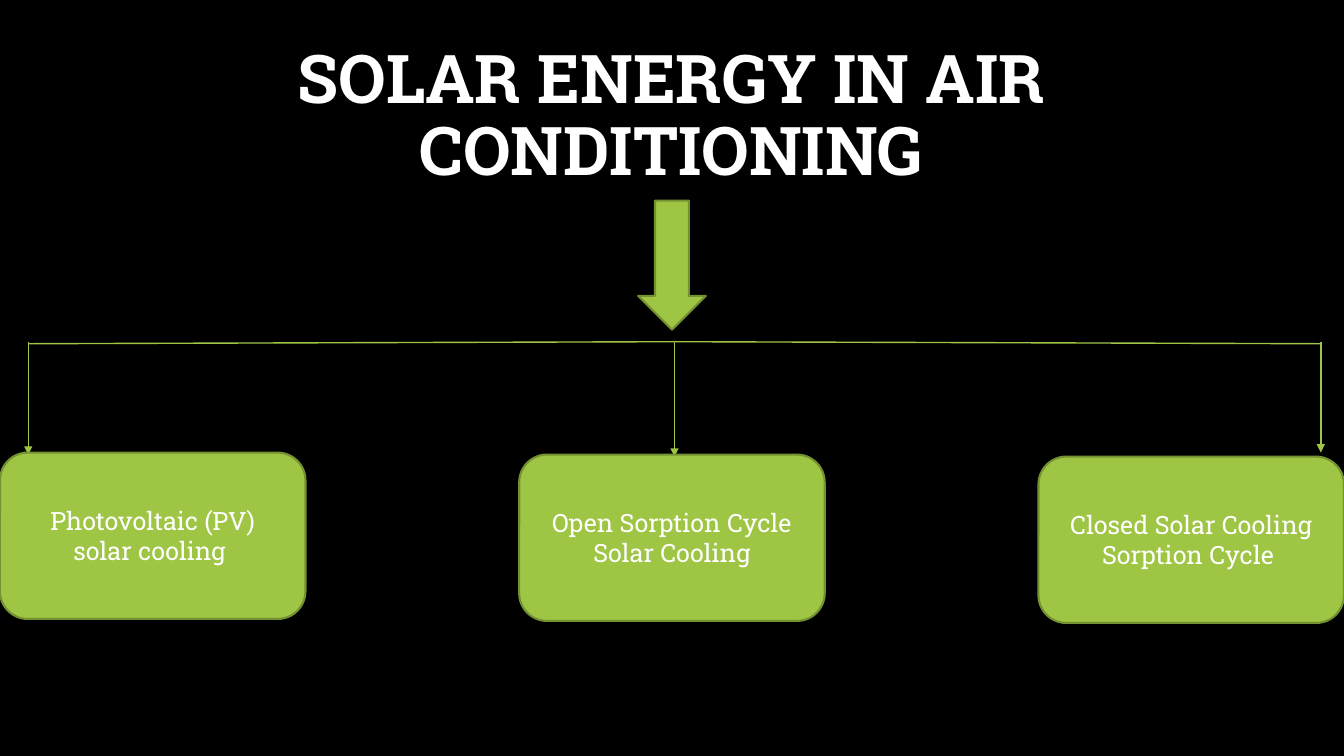
from lxml.etree import SubElement
from pptx import Presentation
from pptx.dml.color import RGBColor
from pptx.enum.shapes import MSO_CONNECTOR, MSO_SHAPE
from pptx.enum.text import MSO_ANCHOR, PP_ALIGN
from pptx.oxml.ns import qn
from pptx.util import Inches, Pt

BLACK = RGBColor(0x00, 0x00, 0x00)
WHITE = RGBColor(0xFF, 0xFF, 0xFF)
GREEN = RGBColor(0x9E, 0xC5, 0x44)
DARK_GREEN = RGBColor(0x75, 0x92, 0x32)

TITLE_FONT = {"name": "Roboto Slab", "size": Pt(48), "bold": True}
LABEL_FONT = {"name": "Roboto Slab", "size": Pt(18), "bold": False}

METHODS = [
    "Photovoltaic (PV) solar cooling ",
    "Open Sorption Cycle Solar Cooling",
    "Closed Solar Cooling Sorption Cycle ",
]


def write_text(shape, text, font, anchor):
    tf = shape.text_frame
    tf.word_wrap = True
    tf.vertical_anchor = anchor
    p = tf.paragraphs[0]
    p.alignment = PP_ALIGN.CENTER
    r = p.add_run()
    r.text = text
    for key, value in font.items():
        setattr(r.font, key, value)
    r.font.color.rgb = WHITE
    return p


def add_title(s, left, top, width, height):
    title = s.shapes.title
    box = {"left": left, "top": top, "width": width, "height": height}
    for key, value in box.items():
        setattr(title, key, Inches(value))
    p = write_text(title, "SOLAR ENERGY IN AIR CONDITIONING", TITLE_FONT, MSO_ANCHOR.BOTTOM)
    p.line_spacing = 0.9


def add_green_shape(s, kind, left, top, width, height):
    sp = s.shapes.add_shape(kind, Inches(left), Inches(top), Inches(width), Inches(height))
    sp.shadow.inherit = False
    sp.fill.solid()
    sp.fill.fore_color.rgb = GREEN
    sp.line.color.rgb = DARK_GREEN
    sp.line.width = Pt(1.5)
    return sp


def add_line(s, x1, y1, x2, y2, arrow=False):
    line = s.shapes.add_connector(
        MSO_CONNECTOR.STRAIGHT, Inches(x1), Inches(y1), Inches(x2), Inches(y2)
    )
    line.line.color.rgb = GREEN
    line.line.width = Pt(1)
    if arrow:
        SubElement(line.line._get_or_add_ln(), qn("a:tailEnd"), type="triangle")
    SubElement(line._element.spPr, qn("a:effectLst"))


def add_branches(s, left, top, width):
    center = left + width / 2
    right = left + width
    for end in (left, right):
        add_line(s, center, top, end, top + 0.02)
    for x, drop in ((left, 1.12), (center, 1.14), (right, 1.1)):
        add_line(s, x, top, x, top + drop, arrow=True)


def add_methods(s, left, top, width, height):
    box_width = 3.03
    step = (width - box_width) / (len(METHODS) - 1)
    for i, text in enumerate(METHODS):
        box = add_green_shape(
            s, MSO_SHAPE.ROUNDED_RECTANGLE, left + i * step, top + i * 0.02, box_width, height
        )
        write_text(box, text, LABEL_FONT, MSO_ANCHOR.MIDDLE)


def main():
    prs = Presentation()
    prs.slide_width = Inches(13.33)
    prs.slide_height = Inches(7.5)
    s = prs.slides.add_slide(prs.slide_layouts[5])
    s.background.fill.solid()
    s.background.fill.fore_color.rgb = BLACK
    add_title(s, 1.74, 0, 9.84, 1.94)
    add_green_shape(s, MSO_SHAPE.DOWN_ARROW, 6.33, 1.99, 0.67, 1.28)
    add_branches(s, 0.28, 3.39, 12.82)
    add_methods(s, 0, 4.49, 13.33, 1.65)
    prs.save("out.pptx")


if __name__ == "__main__":
    main()
